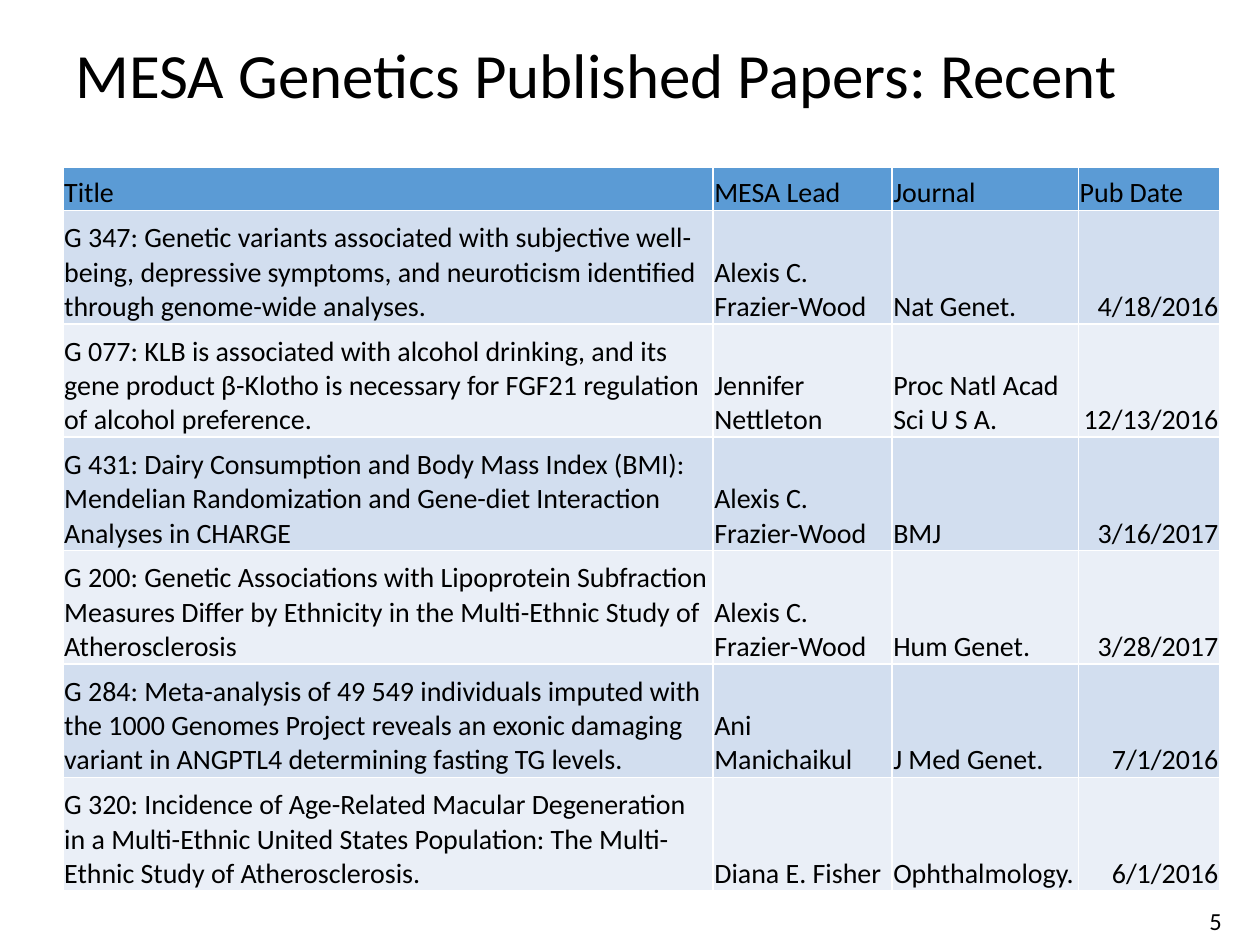
"""Build the slide listing recent MESA Genetics published papers."""
import pptx
import pptx.dml.color
import pptx.enum.text
import pptx.util

Inches = pptx.util.Inches
ANCHOR = pptx.enum.text.MSO_ANCHOR
ALIGN = pptx.enum.text.PP_ALIGN

TITLE = "MESA Genetics Published Papers: Recent"
PAGE_NUMBER = "5"
HEADINGS = ("Title", "MESA Lead", "Journal", "Pub Date")
PAPERS = [
    ("G 347: Genetic variants associated with subjective well-being, depressive symptoms, "
     "and neuroticism identified through genome-wide analyses.",
     "Alexis C. Frazier-Wood", "Nat Genet.", "4/18/2016"),
    ("G 077: KLB is associated with alcohol drinking, and its gene product β-Klotho "
     "is necessary for FGF21 regulation of alcohol preference.",
     "Jennifer Nettleton", "Proc Natl Acad Sci U S A.", "12/13/2016"),
    ("G 431: Dairy Consumption and Body Mass Index (BMI): Mendelian Randomization "
     "and Gene-diet Interaction Analyses in CHARGE",
     "Alexis C. Frazier-Wood", "BMJ", "3/16/2017"),
    ("G 200: Genetic Associations with Lipoprotein Subfraction Measures Differ by Ethnicity "
     "in the Multi-Ethnic Study of Atherosclerosis",
     "Alexis C. Frazier-Wood", "Hum Genet.", "3/28/2017"),
    ("G 284: Meta-analysis of 49 549 individuals imputed with the 1000 Genomes Project "
     "reveals an exonic damaging variant in ANGPTL4 determining fasting TG levels.",
     "Ani Manichaikul", "J Med Genet.", "7/1/2016"),
    ("G 320: Incidence of Age-Related Macular Degeneration in a Multi-Ethnic United States "
     "Population: The Multi-Ethnic Study of Atherosclerosis.",
     "Diana E. Fisher", "Ophthalmology.", "6/1/2016"),
]
COLORS = {"text": "000000", "header": "5B9BD5", "odd": "D2DEEF", "even": "EAEFF7"}
FONT = "Calibri"
COLUMN_WIDTHS = (5.16, 1.42, 1.48, 1.12)
HEADER_HEIGHT, PAPER_HEIGHT = 0.34, 0.9
CELL_INSET = 0.01


def color(name):
    return pptx.dml.color.RGBColor.from_string(COLORS[name])


def write(frame, text, size):
    frame.text = text
    paragraph = frame.paragraphs[0]
    font = paragraph.runs[0].font
    font.name, font.size, font.bold = FONT, pptx.util.Pt(size), False
    font.color.rgb = color("text")
    return paragraph


def add_text(slide, text, size, position, wrap):
    box = slide.shapes.add_textbox(*map(Inches, position))
    box.text_frame.word_wrap = wrap
    return write(box.text_frame, text, size)


def fill_cell(cell, text, fill):
    cell.fill.solid()
    cell.fill.fore_color.rgb = color(fill)
    cell.vertical_anchor = ANCHOR.BOTTOM
    cell.margin_left = cell.margin_right = cell.margin_top = Inches(CELL_INSET)
    cell.margin_bottom = 0
    return write(cell.text_frame, text, 16)


def add_papers(slide):
    rows = [HEADINGS] + PAPERS
    heights = [HEADER_HEIGHT] + [PAPER_HEIGHT] * len(PAPERS)
    table = slide.shapes.add_table(
        len(rows), len(HEADINGS), Inches(0.5), Inches(1.33),
        Inches(sum(COLUMN_WIDTHS)), Inches(sum(heights))).table
    for column, width in zip(table.columns, COLUMN_WIDTHS):
        column.width = Inches(width)
    for r, (values, height) in enumerate(zip(rows, heights)):
        table.rows[r].height = Inches(height)
        fill = "header" if r == 0 else "odd" if r % 2 else "even"
        for c, value in enumerate(values):
            paragraph = fill_cell(table.cell(r, c), value, fill)
            if r and c == len(HEADINGS) - 1:
                paragraph.alignment = ALIGN.RIGHT


def main():
    deck = pptx.Presentation()
    deck.slide_width, deck.slide_height = Inches(10), Inches(7.5)
    slide = deck.slides.add_slide(deck.slide_layouts[6])
    add_text(slide, TITLE, 36, (0.5, 0.3, 9, 1.25), True).line_spacing = 0.9
    add_papers(slide)
    add_text(slide, PAGE_NUMBER, 14, (9.5, 7.14, 0.3, 0.34), False)
    deck.save("out.pptx")


if __name__ == "__main__":
    main()
